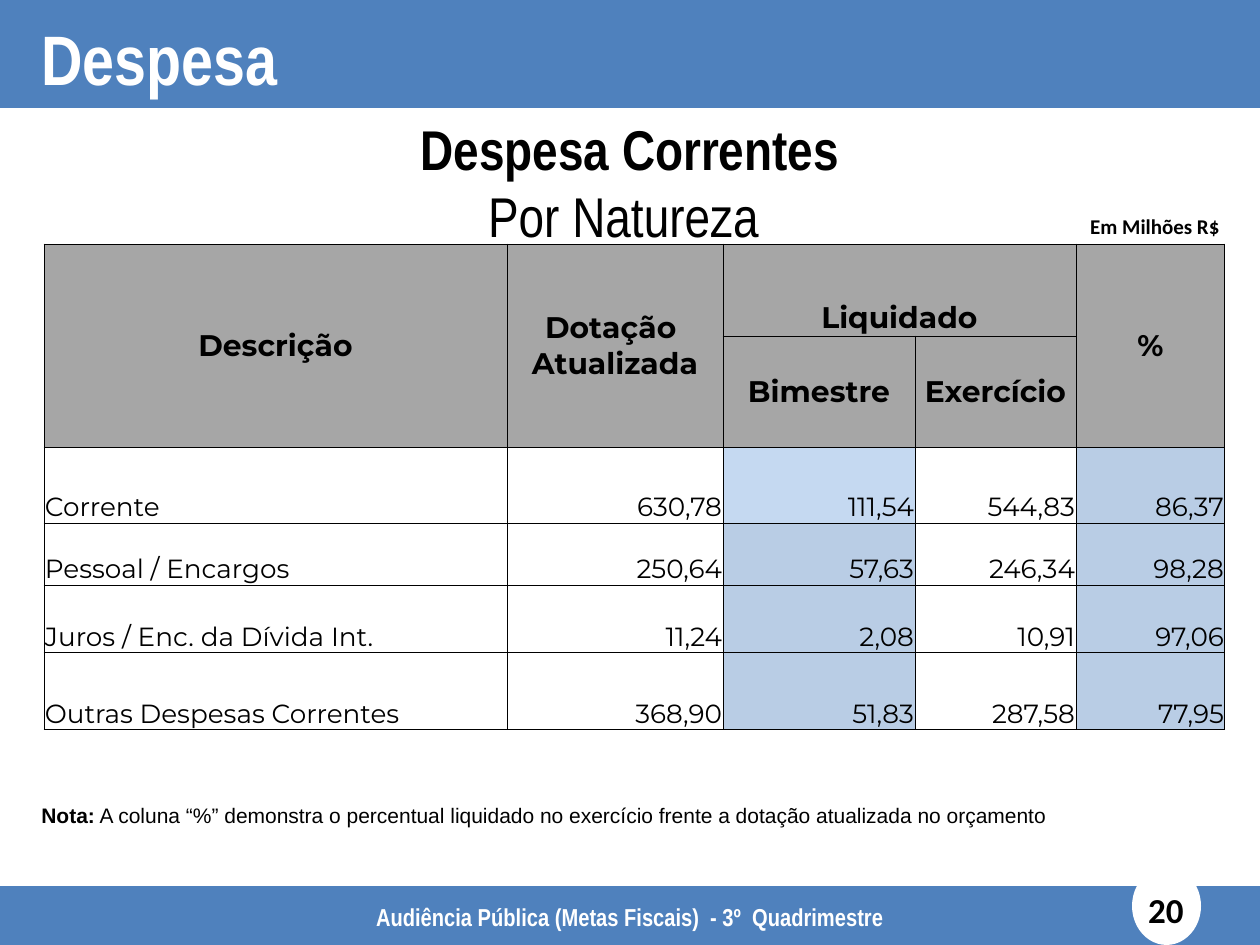
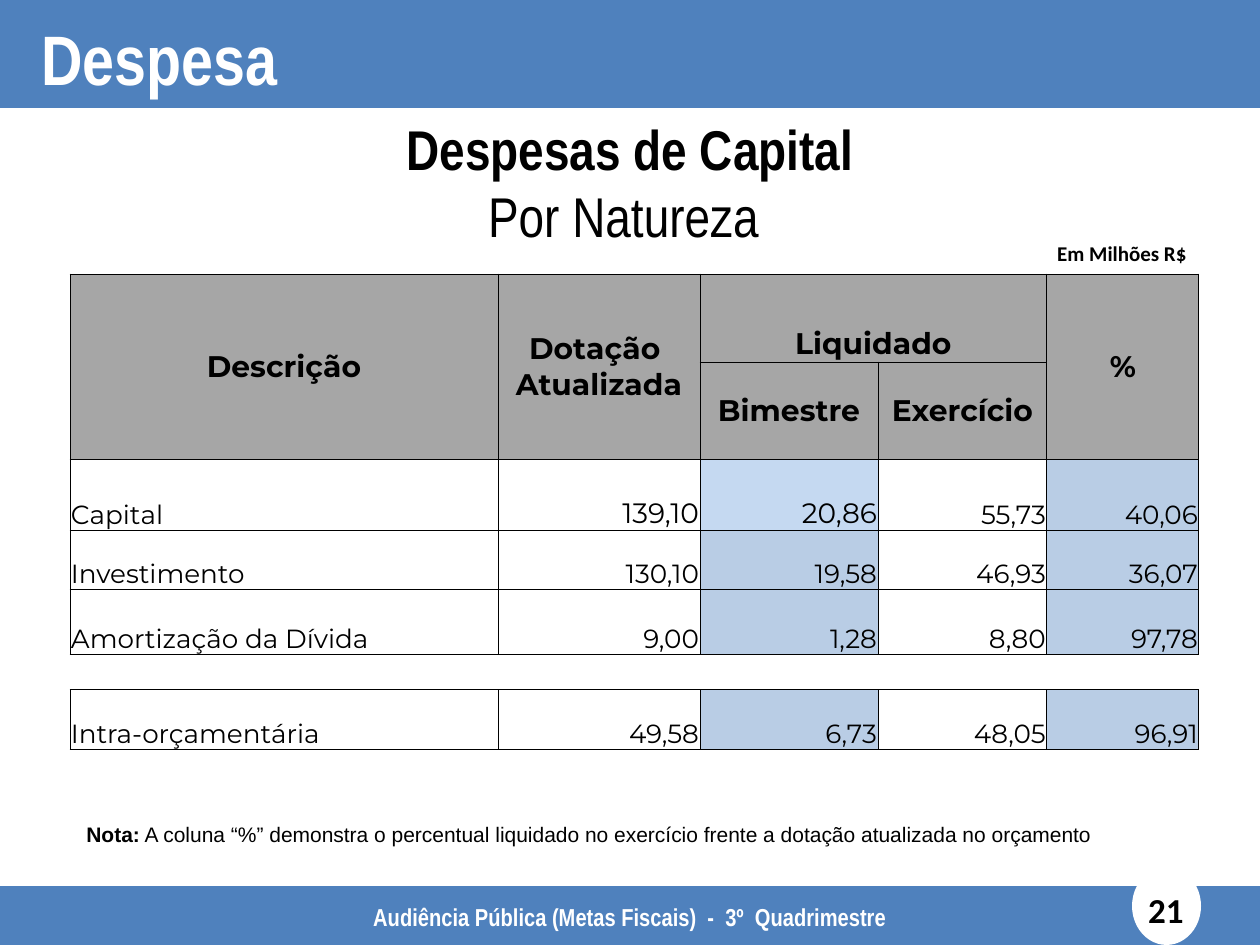
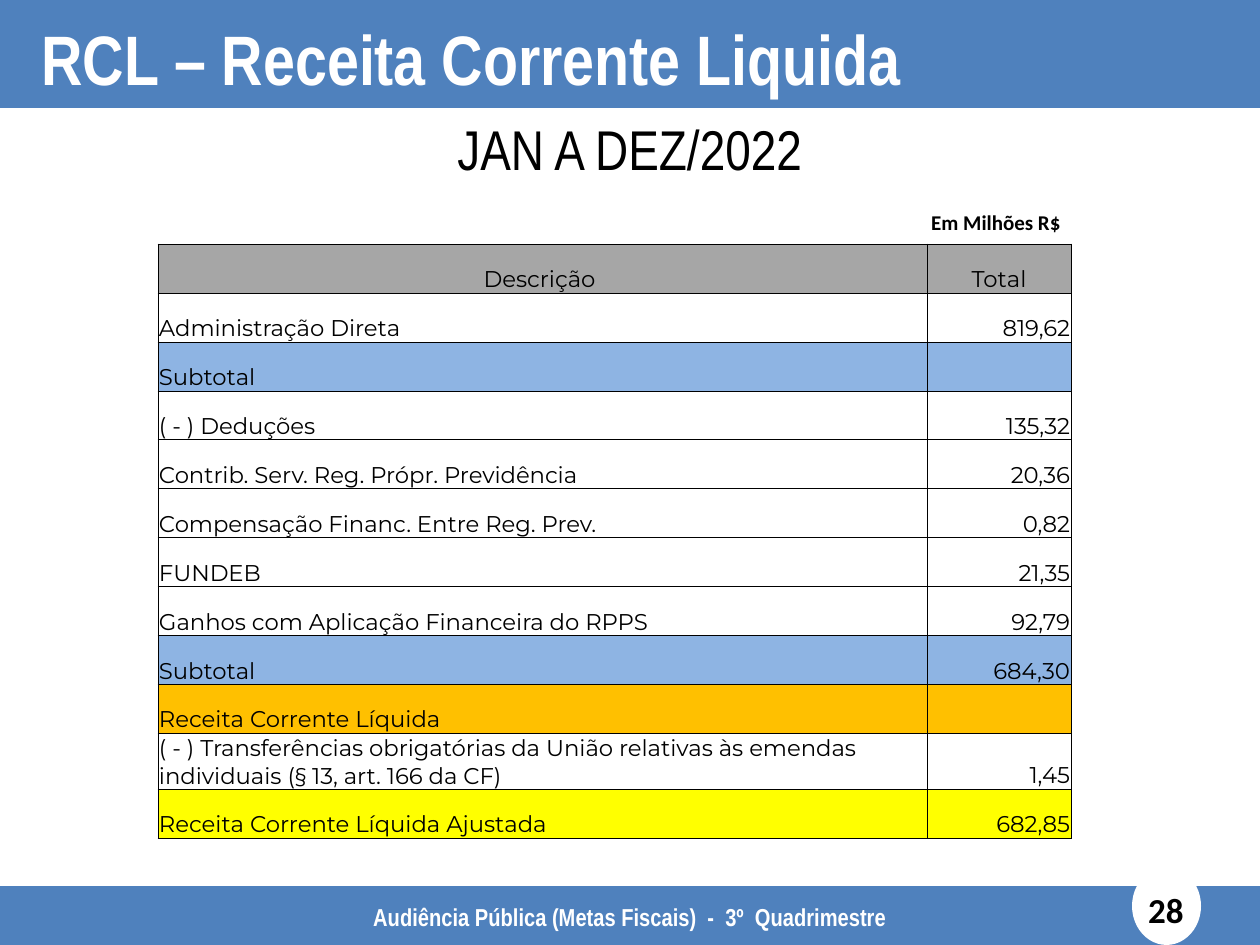
from dataclasses import dataclass
from typing import NamedTuple

from lxml import etree
from pptx import Presentation
from pptx import util as u
from pptx.dml.color import RGBColor
from pptx.enum import shapes, text
from pptx.oxml.ns import qn

# Shared look
EMU_PER_PX = 9144000 / 1260
BLUE, WHITE, BLACK, GRAY = "4F81BD", "FFFFFF", "000000", "A6A6A6"
PALE_BLUE, SOFT_BLUE, SUBTOTAL_BLUE = "C5D9F1", "B9CDE5", "8EB4E3"
ORANGE, YELLOW = "FFC000", "FFFF00"
NARROW, BODY, NOTE, TABLE = "Arial Narrow", "Calibri", "Arial", "Montserrat"
LEFT, CENTER, RIGHT = text.PP_ALIGN.LEFT, text.PP_ALIGN.CENTER, text.PP_ALIGN.RIGHT
MIDDLE, BOTTOM = text.MSO_ANCHOR.MIDDLE, text.MSO_ANCHOR.BOTTOM
UNIT_TEXT = "Em Milhões R$"
NOTE_TEXT = (" A coluna “%” demonstra o percentual liquidado no exercício "
             "frente a dotação atualizada no orçamento")


class Box(NamedTuple):
    left: int
    top: int
    width: int
    height: int


class Style(NamedTuple):
    font: str
    size: int
    bold: bool = False
    color: str = BLACK


@dataclass
class Cell:
    row: int
    col: int
    text: str
    size: int
    align: text.PP_ALIGN = LEFT
    anchor: text.MSO_ANCHOR = BOTTOM
    bold: bool = False
    fill: str | None = None
    row_span: int = 1
    col_span: int = 1
    sides: str = "LRTB"


@dataclass
class Page:
    number: int
    title: str
    subtitle: str
    footer: str
    unit_box: Box
    table_box: Box
    columns: list[int]
    rows: list[int]
    cells: list[Cell]
    note_box: Box | None = None


# Drawing helpers
def px(length: float) -> u.Emu:
    return u.Emu(round(length * EMU_PER_PX))


def place(box: Box) -> list[u.Emu]:
    return [px(length) for length in box]


def rgb(color: str) -> RGBColor:
    return RGBColor.from_string(color)


def format_run(run, style: Style) -> None:
    run.font.name = style.font
    run.font.size = u.Pt(style.size)
    run.font.bold = style.bold
    run.font.color.rgb = rgb(style.color)


def add_plain_shape(slide, kind: shapes.MSO_SHAPE, box: Box, color: str) -> None:
    shape = slide.shapes.add_shape(kind, *place(box))
    shape.shadow.inherit = False
    shape.fill.solid()
    shape.fill.fore_color.rgb = rgb(color)
    shape.line.fill.background()


def add_text(slide, box: Box, wording: str, style: Style,
             align: text.PP_ALIGN = LEFT, wrap: bool = True, grow: bool = True):
    frame = slide.shapes.add_textbox(*place(box)).text_frame
    frame.word_wrap = wrap
    if grow:
        frame.auto_size = text.MSO_AUTO_SIZE.SHAPE_TO_FIT_TEXT
    else:
        frame.vertical_anchor = MIDDLE
    frame.text = wording
    for paragraph in frame.paragraphs:
        paragraph.alignment = align
        for run in paragraph.runs:
            format_run(run, style)
    return frame


def set_borders(cell, sides: str) -> None:
    properties = cell._tc.get_or_add_tcPr()
    for position, side in enumerate("LRTB"):
        line = etree.Element(qn(f"a:ln{side}"), w=str(u.Pt(0.5)))
        if side in sides:
            fill = etree.SubElement(line, qn("a:solidFill"))
            etree.SubElement(fill, qn("a:srgbClr"), val=BLACK)
        else:
            etree.SubElement(line, qn("a:noFill"))
        properties.insert(position, line)


def paint_cell(cell, fill: str | None, sides: str) -> None:
    cell.margin_left = cell.margin_right = cell.margin_top = px(1)
    cell.margin_bottom = 0
    if fill:
        cell.fill.solid()
        cell.fill.fore_color.rgb = rgb(fill)
    else:
        cell.fill.background()
    set_borders(cell, sides)


def write_cell(cell, content: Cell) -> None:
    cell.vertical_anchor = content.anchor
    cell.text = content.text
    paragraph = cell.text_frame.paragraphs[0]
    paragraph.alignment = content.align
    for run in paragraph.runs:
        format_run(run, Style(TABLE, content.size, content.bold))
    if not content.text:
        etree.SubElement(paragraph._p, qn("a:endParaRPr"), sz=str(content.size * 100))


def add_grid(slide, page: Page) -> None:
    table = slide.shapes.add_table(len(page.rows), len(page.columns),
                                   *place(page.table_box)).table
    table.first_row = table.horz_banding = False
    for column, width in zip(table.columns, page.columns):
        column.width = px(width)
    for row, height in zip(table.rows, page.rows):
        row.height = px(height)
    for content in page.cells:
        last_row = content.row + content.row_span
        last_col = content.col + content.col_span
        for row in range(content.row, last_row):
            for col in range(content.col, last_col):
                paint_cell(table.cell(row, col), content.fill, content.sides)
        origin = table.cell(content.row, content.col)
        if content.row_span * content.col_span > 1:
            origin.merge(table.cell(last_row - 1, last_col - 1))
        write_cell(origin, content)


# Table contents
def expense_cells(lines: list[list[str]], exercise_span: int = 1,
                  large: tuple[str, ...] = ()) -> list[Cell]:
    """Two header rows, then one row per line; an empty line is a gap row."""
    percent = 3 + exercise_span

    def header(row: int, col: int, wording: str, row_span: int = 1,
               col_span: int = 1, anchor=MIDDLE) -> Cell:
        return Cell(row, col, wording, 17, CENTER, anchor, True, GRAY, row_span, col_span)

    cells = [
        header(0, 0, "Descrição", row_span=2),
        header(0, 1, "Dotação  Atualizada", row_span=2),
        header(0, 2, "Liquidado", col_span=1 + exercise_span, anchor=BOTTOM),
        header(0, percent, "%", row_span=2),
        header(1, 2, "Bimestre"),
        header(1, 3, "Exercício", col_span=exercise_span),
    ]
    starts = [0, 1, 2, 3, percent]
    for row, line in enumerate(lines, start=2):
        if not line:
            cells += [Cell(row, col, "", 12, sides="TB") for col in range(percent + 1)]
        for col, value in zip(starts, line):
            fill = {2: PALE_BLUE if row == 2 else SOFT_BLUE, percent: SOFT_BLUE}.get(col)
            cells.append(Cell(row, col, value, 16 if value in large else 15,
                              RIGHT if col else LEFT, fill=fill,
                              col_span=exercise_span if col == 3 else 1))
    return cells


def revenue_cells(lines: list[tuple[str, str, str | None]]) -> list[Cell]:
    cells = []
    for row, (description, total, fill) in enumerate(lines):
        cells.append(Cell(row, 0, description, 13, LEFT if row else CENTER, fill=fill))
        cells.append(Cell(row, 1, total, 13, RIGHT if row else CENTER, fill=fill))
    return cells


CURRENT_EXPENSES = [
    ["Corrente", "630,78", "111,54", "544,83", "86,37"],
    ["Pessoal / Encargos", "250,64", "57,63", "246,34", "98,28"],
    ["Juros / Enc. da Dívida Int.", "11,24", "2,08", "10,91", "97,06"],
    ["Outras Despesas Correntes", "368,90", "51,83", "287,58", "77,95"],
]
CAPITAL_EXPENSES = [
    ["Capital", "139,10", "20,86", "55,73", "40,06"],
    ["Investimento", "130,10", "19,58", "46,93", "36,07"],
    ["Amortização da Dívida", "9,00", "1,28", "8,80", "97,78"],
    [],
    ["Intra-orçamentária", "49,58", "6,73", "48,05", "96,91"],
]
NET_REVENUE = [
    ("Descrição ", "Total", GRAY),
    ("Administração Direta", "819,62", None),
    ("Subtotal", "", SUBTOTAL_BLUE),
    ("( - ) Deduções", "135,32", None),
    ("Contrib. Serv. Reg. Própr. Previdência", "20,36", None),
    ("Compensação Financ. Entre Reg. Prev.", "0,82", None),
    ("FUNDEB", "21,35", None),
    ("Ganhos com Aplicação Financeira do RPPS", "92,79", None),
    ("Subtotal", "684,30", SUBTOTAL_BLUE),
    ("Receita Corrente Líquida", "", ORANGE),
    ("( - ) Transferências obrigatórias da União relativas às emendas "
     "individuais (§ 13, art. 166 da CF)", "1,45", None),
    ("Receita Corrente Líquida Ajustada", "682,85", YELLOW),
]

FOOTER = "Audiência Pública (Metas Fiscais)  -  3º  Quadrimestre"
PAGES = [
    Page(20, "Despesa", "Despesa Correntes\nPor Natureza ",
         "Audiência Pública (Metas Fiscais)  - 3º  Quadrimestre",
         Box(1076, 207, 156, 38), Box(44, 244, 1181, 486),
         [463, 216, 192, 161, 149], [92, 111, 76, 62, 68, 77],
         expense_cells(CURRENT_EXPENSES), Box(29, 796, 1186, 38)),
    Page(21, "Despesa", "Despesas de Capital\nPor Natureza ", FOOTER,
         Box(1043, 234, 156, 38), Box(70, 274, 1129, 476),
         [428, 202, 178, 81, 88, 152], [88, 97, 72, 59, 65, 35, 60],
         expense_cells(CAPITAL_EXPENSES, 2, ("139,10", "20,86")),
         Box(74, 815, 1186, 38)),
    Page(28, "RCL – Receita Corrente Liquida", "JAN A DEZ/2022", FOOTER,
         Box(917, 203, 156, 38), Box(158, 244, 913, 591),
         [769, 144], [49] * len(NET_REVENUE), revenue_cells(NET_REVENUE)),
]


# Slide assembly
def add_frame(slide, page: Page) -> None:
    add_plain_shape(slide, shapes.MSO_SHAPE.RECTANGLE, Box(0, 886, 1260, 59), BLUE)
    add_plain_shape(slide, shapes.MSO_SHAPE.OVAL, Box(1132, 867, 69, 78), WHITE)
    add_text(slide, Box(1132, 885, 68, 50), str(page.number),
             Style(BODY, 20, True), CENTER, grow=False)
    add_text(slide, Box(0, 896, 1260, 43), page.footer,
             Style(NARROW, 14, True, WHITE), CENTER)
    add_plain_shape(slide, shapes.MSO_SHAPE.RECTANGLE, Box(0, 0, 1260, 108), BLUE)
    add_text(slide, Box(29, 9, 1074, 97), page.title, Style(NARROW, 40, True, WHITE))


def add_subtitle(slide, page: Page) -> None:
    frame = add_text(slide, Box(0, 108, 1260, 149), page.subtitle,
                     Style(NARROW, 32), CENTER)
    if len(frame.paragraphs) > 1:
        frame.paragraphs[0].runs[0].font.bold = True


def add_note(slide, box: Box) -> None:
    frame = add_text(slide, box, "Nota:", Style(NOTE, 12, True))
    explanation = frame.paragraphs[0].add_run()
    explanation.text = NOTE_TEXT
    format_run(explanation, Style(NOTE, 12))


def main() -> None:
    deck = Presentation()
    deck.slide_width, deck.slide_height = px(1260), px(945)
    for page in PAGES:
        slide = deck.slides.add_slide(deck.slide_layouts[6])
        add_frame(slide, page)
        add_subtitle(slide, page)
        add_grid(slide, page)
        add_text(slide, page.unit_box, UNIT_TEXT, Style(BODY, 12, True), RIGHT, wrap=False)
        if page.note_box:
            add_note(slide, page.note_box)
    deck.save("out.pptx")


if __name__ == "__main__":
    main()
